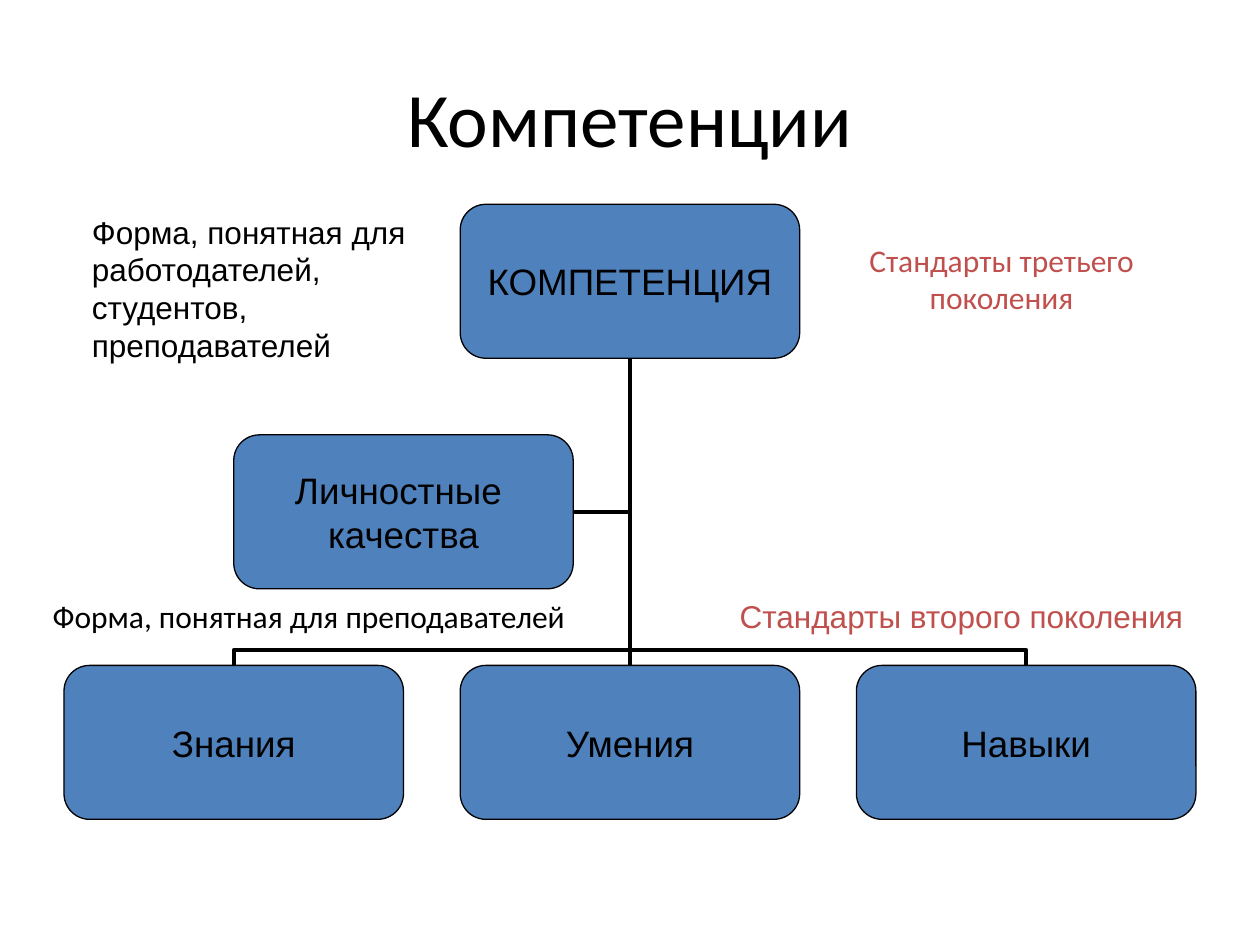
from dataclasses import dataclass

from lxml.etree import SubElement
from pptx import Presentation
from pptx.dml.color import RGBColor
from pptx.enum.shapes import MSO_CONNECTOR, MSO_SHAPE
from pptx.enum.text import MSO_ANCHOR, PP_ALIGN
from pptx.oxml.ns import qn
from pptx.util import Pt


@dataclass(frozen=True)
class Theme:
    ink: RGBColor = RGBColor(0x00, 0x00, 0x00)
    box_fill: RGBColor = RGBColor(0x4F, 0x81, 0xBD)
    accent: RGBColor = RGBColor(0xC0, 0x50, 0x4D)
    heading_font: str = "Calibri"
    diagram_font: str = "Arial"
    title_size: float = 44
    box_size: float = 21
    note_size: float = 18
    outline: float = 0.75
    link: float = 2.25


THEME = Theme()

# Chart grid, in points
BOX_WIDTH, BOX_HEIGHT = 194, 88
CENTER = 360
COLUMN_STEP, ROW_STEP = 226.4, 131.75
TOP = 116.75
COLUMNS = [CENTER + step * COLUMN_STEP for step in (-1, 0, 1)]
ROWS = [TOP + step * ROW_STEP for step in range(3)]
TRUNK_TOP = ROWS[0] + BOX_HEIGHT
BRANCH_BEND = 5100  # thousandths of a percent, measured from the lower box


def add_run(paragraph, text, font, size, color):
    run = paragraph.add_run()
    run.text = text
    run.font.name = font
    run.font.size = Pt(size)
    run.font.color.rgb = color


def add_text(slide, bounds, text, font, size, color,
             align=PP_ALIGN.LEFT, anchor=MSO_ANCHOR.TOP):
    shape = slide.shapes.add_textbox(*map(Pt, bounds))
    frame = shape.text_frame
    frame.word_wrap = True
    frame.vertical_anchor = anchor
    paragraph = frame.paragraphs[0]
    paragraph.alignment = align
    add_run(paragraph, text, font, size, color)


def add_box(slide, center, top, lines):
    shape = slide.shapes.add_shape(
        MSO_SHAPE.ROUNDED_RECTANGLE, Pt(center - BOX_WIDTH / 2), Pt(top),
        Pt(BOX_WIDTH), Pt(BOX_HEIGHT))
    shape.shadow.inherit = False
    shape.fill.solid()
    shape.fill.fore_color.rgb = THEME.box_fill
    shape.line.color.rgb = THEME.ink
    shape.line.width = Pt(THEME.outline)
    frame = shape.text_frame
    frame.margin_left = frame.margin_right = 0
    frame.margin_top = frame.margin_bottom = 0
    frame.word_wrap = False
    frame.vertical_anchor = MSO_ANCHOR.MIDDLE
    for index, line in enumerate(lines):
        paragraph = frame.add_paragraph() if index else frame.paragraphs[0]
        paragraph.alignment = PP_ALIGN.CENTER
        add_run(paragraph, line, THEME.diagram_font, THEME.box_size, THEME.ink)


def add_link(slide, kind, start, end):
    connector = slide.shapes.add_connector(kind, *map(Pt, (*start, *end)))
    connector.line.color.rgb = THEME.ink
    connector.line.width = Pt(THEME.link)
    properties = connector._element.spPr
    SubElement(properties, qn("a:effectLst"))
    return properties


def add_branch(slide, column):
    """Elbow from a lower box up to the trunk, turned to leave vertically."""
    rise = ROWS[2] - TRUNK_TOP
    run = abs(column - CENTER)
    middle_x, middle_y = (column + CENTER) / 2, TRUNK_TOP + rise / 2
    side = 1 if column > CENTER else -1
    properties = add_link(
        slide, MSO_CONNECTOR.ELBOW,
        (middle_x + side * rise / 2, middle_y - run / 2),
        (middle_x - side * rise / 2, middle_y + run / 2))
    turn = 90 if side > 0 else 270
    properties.find(qn("a:xfrm")).set("rot", str(turn * 60000))
    geometry = properties.find(qn("a:prstGeom"))
    adjustments = geometry.find(qn("a:avLst"))
    if adjustments is None:
        adjustments = SubElement(geometry, qn("a:avLst"))
    SubElement(adjustments, qn("a:gd"), name="adj1", fmla=f"val {BRANCH_BEND}")


def add_side_link(slide, box_center):
    """Single-bend elbow from the side box to the trunk."""
    properties = add_link(
        slide, MSO_CONNECTOR.ELBOW,
        (box_center + BOX_WIDTH / 2, ROWS[1] + BOX_HEIGHT / 2),
        (CENTER, TRUNK_TOP))
    properties.find(qn("a:prstGeom")).set("prst", "bentConnector2")


def main():
    presentation = Presentation()
    presentation.slide_width, presentation.slide_height = Pt(720), Pt(540)
    slide = presentation.slides.add_slide(presentation.slide_layouts[6])

    # Title
    add_text(slide, (36, 21.6, 648, 90), "Компетенции", THEME.heading_font,
             THEME.title_size, THEME.ink, PP_ALIGN.CENTER, MSO_ANCHOR.MIDDLE)

    # Links, behind the boxes
    side_center = COLUMNS[0] + BOX_WIDTH / 2
    add_side_link(slide, side_center)
    add_branch(slide, COLUMNS[2])
    add_link(slide, MSO_CONNECTOR.STRAIGHT,
             (CENTER, ROWS[2]), (CENTER, TRUNK_TOP))
    add_branch(slide, COLUMNS[0])

    # Boxes
    add_box(slide, CENTER, ROWS[0], ["КОМПЕТЕНЦИЯ"])
    for column, label in zip(COLUMNS, ("Знания", "Умения", "Навыки")):
        add_box(slide, column, ROWS[2], [label])
    add_box(slide, side_center, ROWS[1], ["Личностные ", "качества"])

    # Notes around the chart
    notes = [
        ((45.4, 118, 209.5, 93.6),
         "Форма, понятная для работодателей, студентов, преподавателей",
         THEME.diagram_font, THEME.ink, PP_ALIGN.LEFT),
        ((393.8, 337.7, 289.4, 28.8), "Стандарты второго поколения",
         THEME.diagram_font, THEME.accent, PP_ALIGN.RIGHT),
        ((473, 134, 198.7, 50.4), "Стандарты третьего поколения",
         THEME.heading_font, THEME.accent, PP_ALIGN.CENTER),
        ((23, 337.7, 348.5, 28.8), "Форма, понятная для преподавателей",
         THEME.heading_font, THEME.ink, PP_ALIGN.LEFT),
    ]
    for bounds, text, font, color, align in notes:
        add_text(slide, bounds, text, font, THEME.note_size, color, align)

    presentation.save("out.pptx")


if __name__ == "__main__":
    main()
